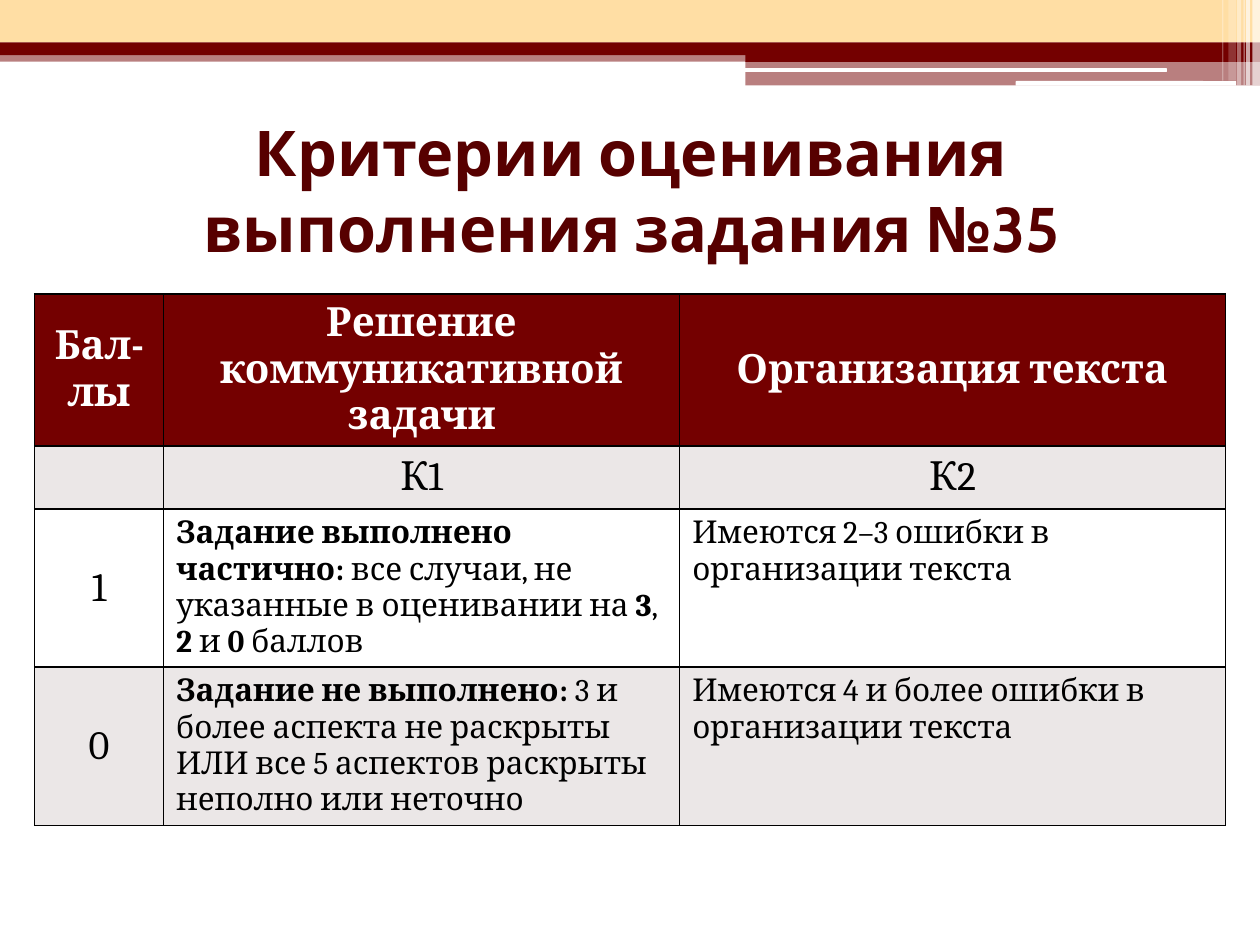
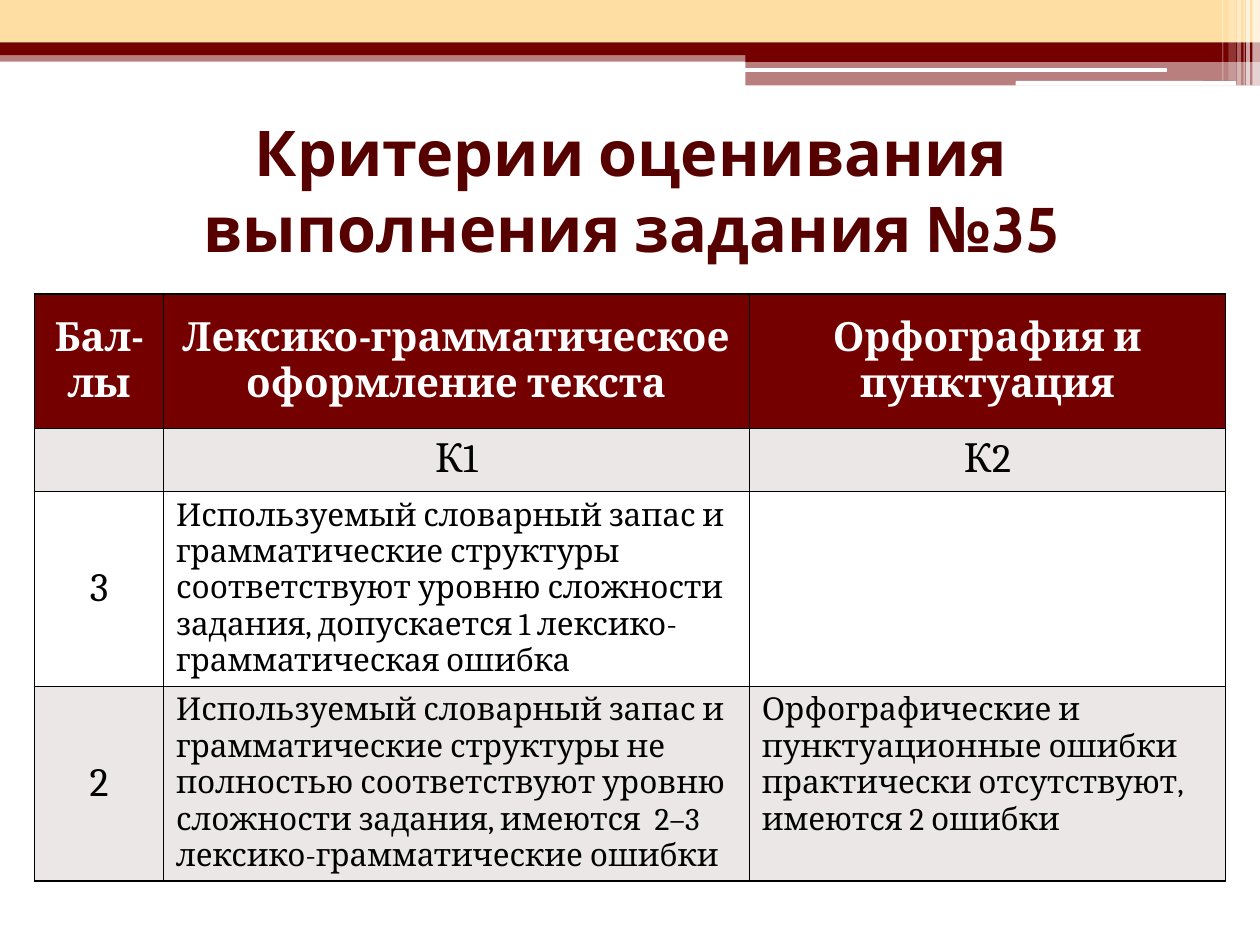
import pptx
import pptx.dml.color
import pptx.enum.shapes
import pptx.enum.text
import pptx.oxml
import pptx.oxml.ns
import pptx.util

Pt = pptx.util.Pt
Rgb = pptx.dml.color.RGBColor.from_string
Kind = pptx.enum.shapes.MSO_SHAPE
Side = pptx.enum.text.PP_ALIGN
Mid = pptx.enum.text.MSO_ANCHOR.MIDDLE
Top = pptx.enum.text.MSO_ANCHOR.TOP

THEME = {
    "wine": "740000", "sand": "FFDEA4", "white": "FFFFFF",
    "pale": "EBE7E7", "black": "000000",
    "title": {"name": "Cabin", "size": 36, "bold": True, "color": "570000"},
    "head": {"name": "Cambria", "size": 23, "bold": True, "color": "FFFFFF"},
    "mark": {"name": "Cambria", "size": 23, "bold": False, "color": "000000"},
    "body": {"name": "Cambria", "size": 18, "bold": False, "color": "000000"},
}

TITLE = "Критерии оценивания выполнения задания №35"
SLIDES = [
    {
        "cols": (73.7, 294.9, 312),
        "rows": (86.9, 36, 90.3, 90.3),
        "cells": [
            ("Бал-лы", "Решение коммуникативной\nзадачи", "Организация текста"),
            ("", "К1", "К2"),
            ("1", "*Задание выполнено частично: *все случаи, не указанные "
                  "в оценивании на *3*, *2* и *0* баллов",
             "Имеются 2–3 ошибки в организации текста"),
            ("0", "*Задание не выполнено: *3 и более аспекта не раскрыты "
                  "ИЛИ все 5 аспектов раскрыты неполно или неточно",
             "Имеются 4 и более ошибки в организации текста"),
        ],
    },
    {
        "cols": (73.7, 334.7, 272.2),
        "rows": (76.8, 36, 111.4, 111.4),
        "cells": [
            ("Бал-лы", "Лексико-грамматическое оформление текста",
             "Орфография и пунктуация"),
            ("", "К1", "К2"),
            ("3", "Используемый словарный запас и грамматические структуры "
                  "соответствуют уровню сложности задания, допускается "
                  "1 лексико- грамматическая ошибка", ""),
            ("2", "Используемый словарный запас и грамматические структуры не "
                  "полностью соответствуют уровню\nсложности задания, имеются  "
                  "2–3 лексико-грамматические ошибки",
             "Орфографические и пунктуационные ошибки практически "
             "отсутствуют, имеются 2 ошибки"),
        ],
    },
]

BANDS = [
    (0, 28.8, 720, 6.5, "wine", 50),
    (0, 0, 720, 24.3, "sand", 100),
    (0, 24.3, 720, 7.2, "wine", 100),
    (426, 28.2, 294, 7.2, "wine", 100),
    (426, 35, 294, 13.8, "wine", 50),
]
BARS = [(425.6, 39, 241.2, 2.1), (580.4, 46.3, 126, 2.7)]
STRIPES = [
    (715.7, 4.3, 48.8, 65), (712.1, 2.2, 48.8, 65), (710.6, 0.72, 48.8, 60),
    (707, 2.2, 48.8, 40), (702, 4.3, 46.1, 20), (698.4, 0.72, 46.1, 30),
]


def style(font, look):
    for key, val in look.items():
        if key == "color":
            font.color.rgb = Rgb(val)
        else:
            setattr(font, key, Pt(val) if key == "size" else val)


def write(frame, text, look, side):
    for num, line in enumerate(text.split("\n")):
        para = frame.paragraphs[0] if num == 0 else frame.add_paragraph()
        para.alignment = side
        for odd, part in enumerate(line.split("*")):
            if part:
                run = para.add_run()
                run.text = part
                style(run.font, look)
                if odd % 2:
                    run.font.bold = True


def paint(slide, tree, kind, box, tint, alpha):
    shape = slide.shapes.add_shape(kind, *map(Pt, box))
    shape.shadow.inherit = False
    shape.line.fill.background()
    shape.fill.solid()
    shape.fill.fore_color.rgb = Rgb(THEME[tint])
    if alpha < 100:
        color = shape.element.spPr.find(".//" + pptx.oxml.ns.qn("a:srgbClr"))
        color.append(pptx.oxml.parse_xml(
            f'<a:alpha {pptx.oxml.ns.nsdecls("a")} val="{alpha * 1000}"/>'))
    tree.append(shape.element)


def trim(slide, tree):
    for *box, tint, alpha in BANDS:
        paint(slide, tree, Kind.RECTANGLE, box, tint, alpha)
    for box in BARS:
        paint(slide, tree, Kind.ROUNDED_RECTANGLE, box, "white", 100)
    for left, wide, high, alpha in STRIPES:
        paint(slide, tree, Kind.RECTANGLE, (left, 0, wide, high), "white", alpha)


def frame_cell(cell):
    props = cell._tc.get_or_add_tcPr()
    for edge in "LRTB":
        props.append(pptx.oxml.parse_xml(
            f'<a:ln{edge} {pptx.oxml.ns.nsdecls("a")} w="12700"><a:solidFill>'
            f'<a:srgbClr val="{THEME["black"]}"/></a:solidFill></a:ln{edge}>'))


def add_grid(slide, data):
    cols, rows, cells = data["cols"], data["rows"], data["cells"]
    grid = slide.shapes.add_table(
        len(rows), len(cols), Pt(19.8), Pt(168), Pt(sum(cols)), Pt(sum(rows))).table
    grid.first_row = grid.horz_banding = False
    for col, wide in zip(grid.columns, cols):
        col.width = Pt(wide)
    for row, high in zip(grid.rows, rows):
        row.height = Pt(high)
    for r, texts in enumerate(cells):
        for c, text in enumerate(texts):
            cell = grid.cell(r, c)
            frame_cell(cell)
            cell.fill.solid()
            tint = "wine" if r == 0 else "pale" if r % 2 else "white"
            cell.fill.fore_color.rgb = Rgb(THEME[tint])
            prose = r > 1 and c > 0
            look = "body" if prose else "mark" if r else "head"
            cell.vertical_anchor = Top if prose else Mid
            write(cell.text_frame, text, THEME[look],
                  Side.LEFT if prose else Side.CENTER)


def add_title(slide):
    title = slide.shapes.title
    spots = {"left": 36.7, "top": 66.2, "width": 648, "height": 84.2}
    for key, val in spots.items():
        setattr(title, key, Pt(val))
    frame = title.text_frame
    looks = {"word_wrap": True, "vertical_anchor": Mid,
             "auto_size": pptx.enum.text.MSO_AUTO_SIZE.NONE}
    for key, val in looks.items():
        setattr(frame, key, val)
    write(frame, TITLE, THEME["title"], Side.CENTER)


def main():
    deck = pptx.Presentation()
    deck.slide_width, deck.slide_height = Pt(720), Pt(540)
    base = deck.slide_layouts[5]
    for num, data in enumerate(SLIDES):
        slide = deck.slides.add_slide(base)
        if num == 0:
            trim(slide, base.shapes.element)
        add_title(slide)
        add_grid(slide, data)
    deck.save("out.pptx")


if __name__ == "__main__":
    main()
